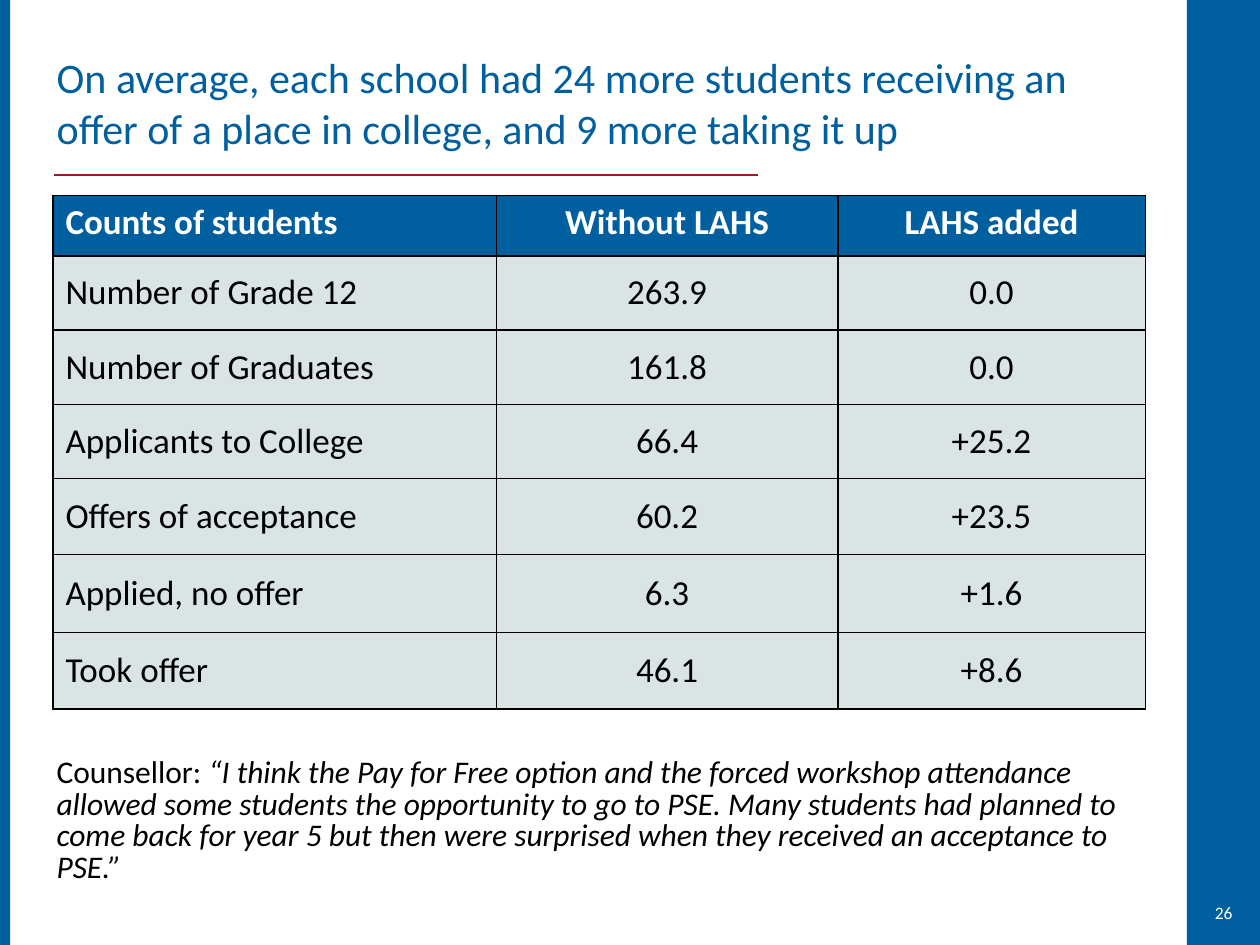
from lxml import etree
from pptx import Presentation
from pptx.dml.color import RGBColor
from pptx.enum import shapes, text
from pptx.oxml import ns
from pptx.util import Inches, Pt

BLUE, RED, PALE, BLACK, WHITE = "005F9F", "A8152B", "DBE4E4", "000000", "FFFFFF"
LEFT, CENTER, RIGHT = text.PP_ALIGN.LEFT, text.PP_ALIGN.CENTER, text.PP_ALIGN.RIGHT
TOP, MIDDLE = text.MSO_ANCHOR.TOP, text.MSO_ANCHOR.MIDDLE

TITLE = ("On average, each school had 24 more students receiving an "
         "offer of a place in college, and 9 more taking it up")
ROWS = [
    ("Counts of students", "Without LAHS", "LAHS added"),
    ("Number of Grade 12", "263.9", "0.0"),
    ("Number of Graduates", "161.8", "0.0"),
    ("Applicants to College", "66.4", "+25.2"),
    ("Offers of acceptance", "60.2", "+23.5"),
    ("Applied, no offer", "6.3", "+1.6"),
    ("Took offer", "46.1", "+8.6"),
]
COL_WIDTHS = [3.52, 2.71, 2.44]
ROW_HEIGHTS = [0.48, 0.59, 0.59, 0.59, 0.6, 0.62, 0.61]
SPEAKER = "Counsellor: "
QUOTE = ("“I think the Pay for Free option and the forced workshop attendance "
         "allowed some students the opportunity to go to PSE. Many students had "
         "planned to come back for year 5 but then were surprised when they "
         "received an acceptance to PSE.”")
BANDS = [(9.42, 0.58), (0, 0.08)]


def rgb(color):
    return RGBColor.from_string(color)


def add_text(p, content, size=18, color=BLACK, bold=False, italic=False, align=LEFT):
    p.alignment = align
    r = p.add_run()
    r.text = content
    r.font.name, r.font.size = "Calibri", Pt(size)
    r.font.bold, r.font.italic = bold, italic
    r.font.color.rgb = rgb(color)


def text_frame(sp, anchor):
    tf = sp.text_frame
    tf.word_wrap, tf.vertical_anchor = True, anchor
    return tf


def add_borders(cell):
    """Put thin black lines round a cell, ahead of its fill."""
    tc_pr = cell._tc.get_or_add_tcPr()
    for i, side in enumerate(("lnL", "lnR", "lnT", "lnB")):
        ln = etree.Element(ns.qn("a:" + side), w=str(Pt(1)))
        fill = etree.SubElement(ln, ns.qn("a:solidFill"))
        etree.SubElement(fill, ns.qn("a:srgbClr"), val=BLACK)
        tc_pr.insert(i, ln)


prs = Presentation()
prs.slide_width, prs.slide_height = Inches(10), Inches(7.5)
s = prs.slides.add_slide(prs.slide_layouts[5])

for left, width in BANDS:
    band = s.shapes.add_shape(shapes.MSO_SHAPE.RECTANGLE, Inches(left), 0,
                              Inches(width), prs.slide_height)
    band.shadow.inherit = False
    band.fill.solid()
    band.fill.fore_color.rgb = rgb(BLUE)
    band.line.fill.background()

rule = s.shapes.add_connector(shapes.MSO_CONNECTOR.STRAIGHT, Inches(0.43), Inches(1.39),
                              Inches(6.02), Inches(1.39))
rule.line.color.rgb, rule.line.width = rgb(RED), Pt(0.75)
etree.SubElement(rule._element.spPr, ns.qn("a:effectLst"))

title = s.shapes.title
title.left, title.top = Inches(0.35), Inches(0.33)
title.width, title.height = Inches(8.81), Inches(0.96)
tf = text_frame(title, MIDDLE)
tf.auto_size = text.MSO_AUTO_SIZE.NONE
add_text(tf.paragraphs[0], TITLE, size=24, color=BLUE)

number = s.shapes.add_textbox(Inches(8.8), Inches(7.08), Inches(1.08), Inches(0.33))
add_text(text_frame(number, MIDDLE).paragraphs[0], "26", size=10, color=WHITE, align=RIGHT)

table = s.shapes.add_table(len(ROWS), len(COL_WIDTHS), Inches(0.42), Inches(1.55),
                           Inches(sum(COL_WIDTHS)), Inches(sum(ROW_HEIGHTS))).table
for col, width in zip(table.columns, COL_WIDTHS):
    col.width = Inches(width)
for row, height in zip(table.rows, ROW_HEIGHTS):
    row.height = Inches(height)
for i, values in enumerate(ROWS):
    header = i == 0
    for j, value in enumerate(values):
        cell = table.cell(i, j)
        cell.fill.solid()
        cell.fill.fore_color.rgb = rgb(BLUE if header else PALE)
        add_borders(cell)
        cell.vertical_anchor = TOP if header else MIDDLE
        if j and not header:
            cell.margin_left = cell.margin_right = Inches(0.07)
            cell.margin_top = cell.margin_bottom = 0
        add_text(cell.text_frame.paragraphs[0], value, size=20, bold=header,
                 color=WHITE if header else BLACK, align=CENTER if j else LEFT)

quote = s.shapes.add_textbox(Inches(0.35), Inches(5.97), Inches(8.81), Inches(1.11))
tf = text_frame(quote, TOP)
tf.auto_size = text.MSO_AUTO_SIZE.SHAPE_TO_FIT_TEXT
p = tf.paragraphs[0]
p.line_spacing, p.space_after = Pt(18), Pt(7)
add_text(p, SPEAKER)
add_text(p, QUOTE, italic=True)

prs.save("out.pptx")
